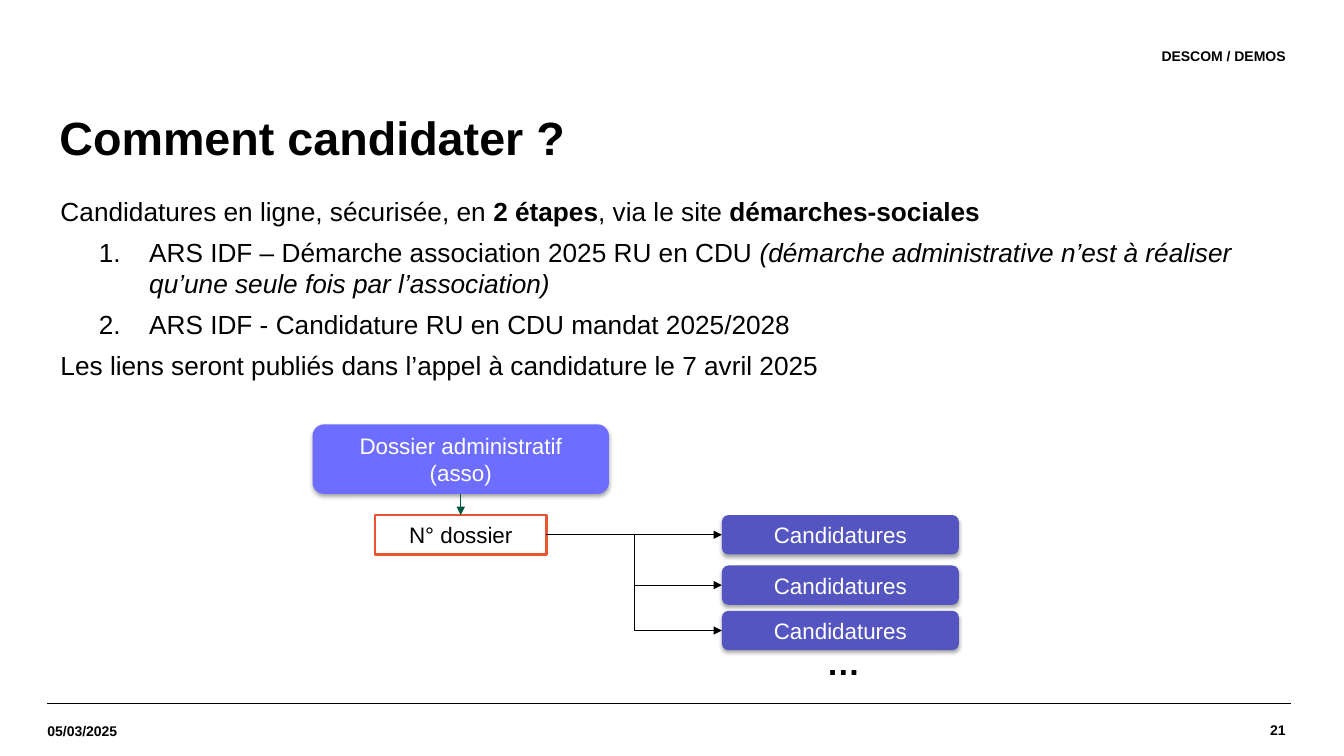
from collections import namedtuple

from lxml.etree import SubElement
from pptx import Presentation
from pptx.dml.color import RGBColor
from pptx.enum.shapes import MSO_CONNECTOR as Connector, MSO_SHAPE as Shape
from pptx.enum.text import MSO_ANCHOR as Anchor, PP_ALIGN as Align
from pptx.oxml.ns import qn
from pptx.util import Inches, Pt

Box = namedtuple("Box", "left top width height")
Run = namedtuple("Run", "text bold italic", defaults=(False, False))

WIDTH, HEIGHT = 13.33, 7.5
MARGIN = 0.47
CONTENT = 12.28
FONT = "Arial"
BLACK, WHITE = "000000", "FFFFFF"
VIOLET, INDIGO = "6D6DFF", "5555C1"
ORANGE, GREEN = "EA5433", "005640"

INTRO = [
    Run("Candidatures en ligne, sécurisée, en "),
    Run("2 étapes", bold=True),
    Run(", via le site "),
    Run("démarches-sociales", bold=True),
]
STEPS = [
    [
        Run("ARS IDF – Démarche association 2025 RU en CDU"),
        Run(" (démarche administrative n’est à réaliser qu’une seule fois "
            "par l’association)", italic=True),
    ],
    [Run("ARS IDF - Candidature RU en CDU mandat 2025/2028")],
]
CLOSING = [Run("Les liens seront publiés dans l’appel à candidature le 7 avril 2025")]


def color(value):
    return RGBColor.from_string(value)


def inches(box):
    return [Inches(length) for length in box]


def add_runs(paragraph, runs, size, ink=BLACK):
    for item in runs:
        run = paragraph.add_run()
        run.text = item.text
        run.font.name = FONT
        run.font.size = Pt(size)
        run.font.bold = item.bold
        run.font.italic = item.italic
        run.font.color.rgb = color(ink)


def add_text_box(slide, box, anchor=Anchor.MIDDLE, inset=0.0):
    frame = slide.shapes.add_textbox(*inches(box)).text_frame
    frame.word_wrap = True
    frame.vertical_anchor = anchor
    frame.margin_left = frame.margin_right = Inches(inset)
    frame.margin_top = frame.margin_bottom = Inches(inset / 2)
    return frame


def add_label(slide, box, text, align=Align.LEFT):
    paragraph = add_text_box(slide, box).paragraphs[0]
    paragraph.alignment = align
    add_runs(paragraph, [Run(text, bold=True)], 10)


def set_indent(paragraph, left, first=0.0):
    properties = paragraph._p.get_or_add_pPr()
    properties.set("marL", str(Inches(left)))
    properties.set("indent", str(Inches(first)))
    return properties


def add_shadow(shape):
    effects = shape._element.spPr.find(qn("a:effectLst"))
    shadow = SubElement(effects, qn("a:outerShdw"), blurRad=str(Pt(3.1)),
                        dist=str(Pt(1.8)), dir="5400000", rotWithShape="0")
    tint = SubElement(shadow, qn("a:srgbClr"), val=BLACK)
    SubElement(tint, qn("a:alpha"), val="35000")


def add_node(slide, box, lines, fill, ink=WHITE, outline=None):
    kind = Shape.RECTANGLE if outline else Shape.ROUNDED_RECTANGLE
    shape = slide.shapes.add_shape(kind, *inches(box))
    shape.shadow.inherit = False
    shape.fill.solid()
    shape.fill.fore_color.rgb = color(fill)
    if outline:
        shape.line.color.rgb = color(outline)
        shape.line.width = Pt(2)
    else:
        shape.line.fill.background()
        add_shadow(shape)
    frame = shape.text_frame
    frame.word_wrap = True
    frame.vertical_anchor = Anchor.MIDDLE
    for index, line in enumerate(lines):
        paragraph = frame.add_paragraph() if index else frame.paragraphs[0]
        paragraph.alignment = Align.CENTER
        add_runs(paragraph, [Run(line)], 16, ink)
    return shape


def add_line(slide, kind, start=(0, 0), end=(0, 0), ink=BLACK, width=0.75):
    line = slide.shapes.add_connector(kind, *inches(start + end))
    line.line.color.rgb = color(ink)
    line.line.width = Pt(width)
    SubElement(line._element.spPr, qn("a:effectLst"))
    return line


def add_arrow(slide, kind, source, source_side, target, target_side, ink=BLACK):
    arrow = add_line(slide, kind, ink=ink)
    arrow.begin_connect(source, source_side)
    arrow.end_connect(target, target_side)
    SubElement(arrow.line._get_or_add_ln(), qn("a:tailEnd"), type="triangle")


def build_header(slide, box):
    add_label(slide, box, "DESCOM / DEMOS", Align.RIGHT)


def build_title(slide, box):
    paragraph = add_text_box(slide, box, inset=0.1).paragraphs[0]
    set_indent(paragraph, 0.02)
    paragraph.line_spacing = 0.9
    add_runs(paragraph, [Run("Comment candidater ?", bold=True)], 33.3)


def build_body(slide, box):
    frame = add_text_box(slide, box, Anchor.TOP)
    for index, runs in enumerate([INTRO, *STEPS, CLOSING]):
        paragraph = frame.add_paragraph() if index else frame.paragraphs[0]
        paragraph.space_after = Pt(6.7)
        if runs in STEPS:
            properties = set_indent(paragraph, 1.01, -0.5)
            SubElement(properties, qn("a:buFont"), typeface=FONT)
            SubElement(properties, qn("a:buAutoNum"), type="arabicPeriod")
        else:
            set_indent(paragraph, 0.13)
        add_runs(paragraph, runs, 18.7)


def build_diagram(slide, box):
    row = 0.39
    file_width, number_width, application_width = 2.94, 1.7, 2.35
    first_row = box.top + 0.9
    application_left = box.left + box.width - application_width

    file = add_node(slide, Box(box.left, box.top, file_width, 0.69),
                    ["Dossier administratif", "(asso)"], VIOLET)
    number_left = box.left + (file_width - number_width) / 2
    number = add_node(slide, Box(number_left, first_row, number_width, row),
                      ["N° dossier"], WHITE, BLACK, ORANGE)
    add_arrow(slide, Connector.STRAIGHT, file, 2, number, 0, GREEN)

    for offset in (0, 0.5, 0.95):
        application = add_node(
            slide, Box(application_left, first_row + offset, application_width, row),
            ["Candidatures"], INDIGO)
        kind = Connector.ELBOW if offset else Connector.STRAIGHT
        add_arrow(slide, kind, number, 3, application, 1)

    more = Box(application_left + 0.94, box.top + box.height - 0.5, 0.77, 0.5)
    frame = add_text_box(slide, more, Anchor.TOP, inset=0.1)
    add_runs(frame.paragraphs[0], [Run("…", bold=True)], 24)


def build_footer(slide, box):
    add_line(slide, Connector.STRAIGHT, (box.left, box.top),
             (box.left + box.width + 0.05, box.top), width=0.8)
    add_label(slide, Box(box.left, box.top + 0.02, 1.71, 0.5), "05/03/2025")
    number_width = 1.97
    add_label(slide, Box(box.left + box.width - number_width, box.top,
                         number_width, box.height), "21", Align.RIGHT)


def main():
    presentation = Presentation()
    presentation.slide_width = Inches(WIDTH)
    presentation.slide_height = Inches(HEIGHT)
    slide = presentation.slides.add_slide(presentation.slide_layouts[6])
    build_footer(slide, Box(MARGIN, 6.98, CONTENT, 0.52))
    build_header(slide, Box(MARGIN + CONTENT - 8.57, 0.29, 8.57, 0.52))
    build_title(slide, Box(MARGIN, 1, CONTENT, 0.79))
    build_body(slide, Box(MARGIN, 1.94, CONTENT, 4.69))
    build_diagram(slide, Box(3.1, 4.21, 6.41, 2.61))
    presentation.save("out.pptx")


if __name__ == "__main__":
    main()
